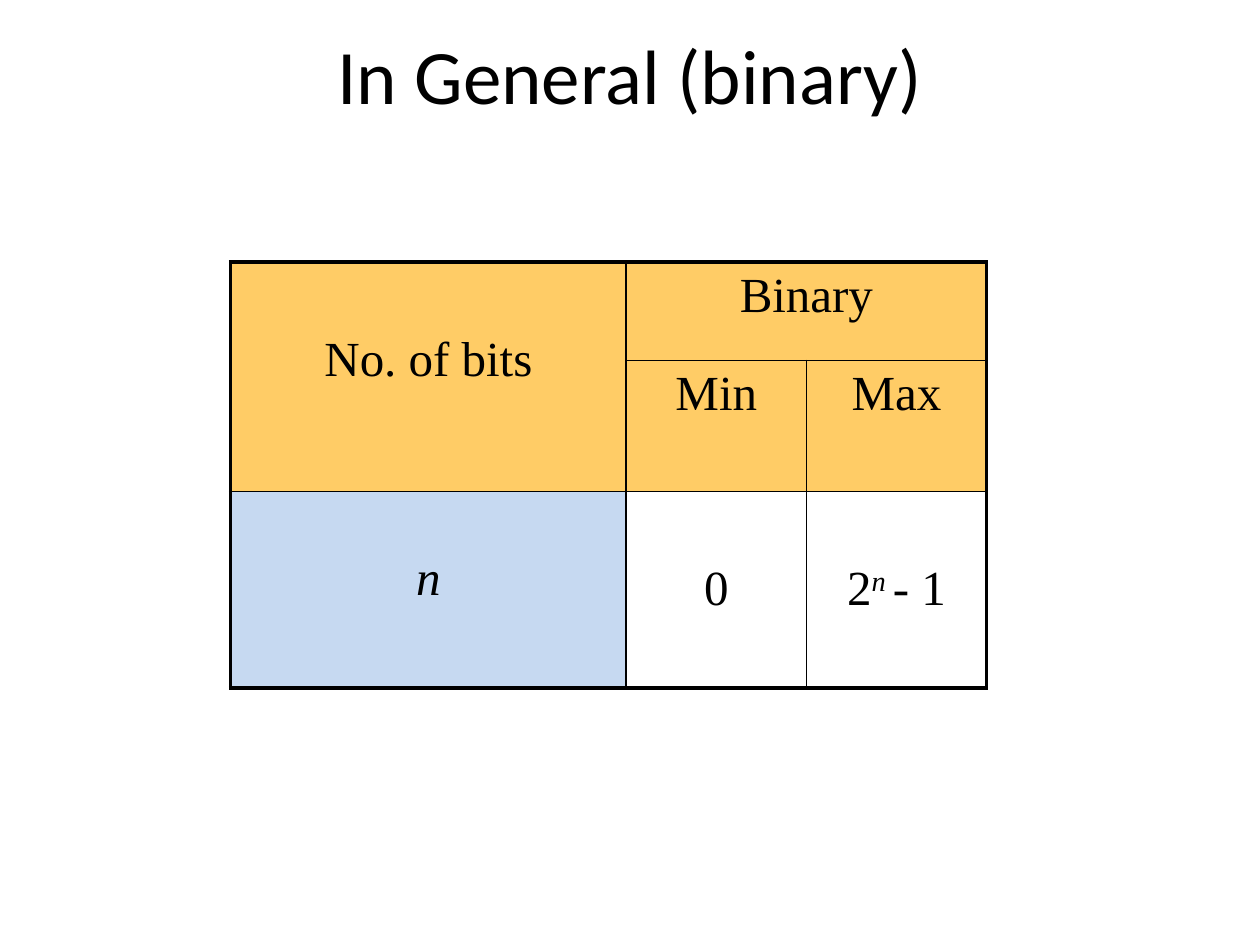
from lxml.etree import SubElement as Sub
from pptx import Presentation
from pptx.dml.color import RGBColor as Rgb
from pptx.enum.text import MSO_ANCHOR as Anchor, PP_ALIGN as Align
from pptx.oxml.ns import qn
from pptx.util import Inches, Pt

BLACK = Rgb(0x00, 0x00, 0x00)
GOLD = Rgb(0xFF, 0xCC, 0x66)
BLUE = Rgb(0xC6, 0xD9, 0xF1)
SERIF = "Times New Roman"
COLS = (3.14, 1.43, 1.43)
ROWS = (0.78, 1.04, 1.56)


def write(para, text, size=28, font=SERIF, slant=False, base=0):
    """Add a run of text to a centred paragraph."""
    para.alignment = Align.CENTER
    run = para.add_run()
    run.text = text
    face = run.font
    face.size, face.name, face.italic = Pt(size), font, slant
    face.color.rgb = BLACK
    if base:
        face._element.set("baseline", str(base * 1000))


def edge(cell, row, col):
    """Draw heavy lines on the table's rim and thin lines inside it."""
    rims = {
        "L": col == 0,
        "R": col + cell.span_width == len(COLS),
        "T": row == 0,
        "B": row + cell.span_height == len(ROWS),
    }
    props = cell._tc.get_or_add_tcPr()
    for side, rim in rims.items():
        line = Sub(props, qn(f"a:ln{side}"), w=str(Pt(2.25 if rim else 1)))
        fill = Sub(line, qn("a:solidFill"))
        Sub(fill, qn("a:srgbClr"), val=str(BLACK))


def fill_cell(grid, row, col, runs, fill=None, top=0.05):
    """Format one cell and write its runs, set down from the top."""
    cell = grid.cell(row, col)
    edge(cell, row, col)
    if fill is None:
        cell.fill.background()
    else:
        cell.fill.solid()
        cell.fill.fore_color.rgb = fill
    cell.vertical_anchor = Anchor.TOP
    cell.margin_top = Inches(top)
    for text, form in runs:
        write(cell.text_frame.paragraphs[0], text, **form)


def add_title(slide, left, top, width, height):
    """Place the slide title."""
    title = slide.shapes.title
    title.left, title.top = Inches(left), Inches(top)
    title.width, title.height = Inches(width), Inches(height)
    title.text_frame.vertical_anchor = Anchor.MIDDLE
    write(title.text_frame.paragraphs[0], "In General (binary)", size=44, font="Calibri")


def add_range(slide, left, top):
    """Place the table of binary ranges."""
    grid = slide.shapes.add_table(
        len(ROWS), len(COLS), Inches(left), Inches(top), Inches(sum(COLS)), Inches(sum(ROWS))
    ).table
    grid.first_row = grid.horz_banding = False
    for col, width in zip(grid.columns, COLS):
        col.width = Inches(width)
    for row, height in zip(grid.rows, ROWS):
        row.height = Inches(height)
    grid.cell(0, 0).merge(grid.cell(1, 0))
    grid.cell(0, 1).merge(grid.cell(0, 2))
    fill_cell(grid, 0, 0, [("No. of bits", {})], GOLD, top=0.56)
    fill_cell(grid, 0, 1, [("Binary", {})], GOLD)
    fill_cell(grid, 1, 1, [("Min", {})], GOLD)
    fill_cell(grid, 1, 2, [("Max", {})], GOLD)
    fill_cell(grid, 2, 0, [("n", {"slant": True})], BLUE, top=0.48)
    fill_cell(grid, 2, 1, [("0", {})], top=0.56)
    power = [("2", {}), ("n ", {"slant": True, "base": 30}), ("- 1", {})]
    fill_cell(grid, 2, 2, power, top=0.56)


def main():
    """Build and save the slide."""
    deck = Presentation()
    deck.slide_width, deck.slide_height = Inches(10), Inches(7.5)
    slide = deck.slides.add_slide(deck.slide_layouts[5])
    add_title(slide, 0.75, 0.17, 8.5, 0.83)
    add_range(slide, 1.83, 2.08)
    deck.save("out.pptx")


if __name__ == "__main__":
    main()
